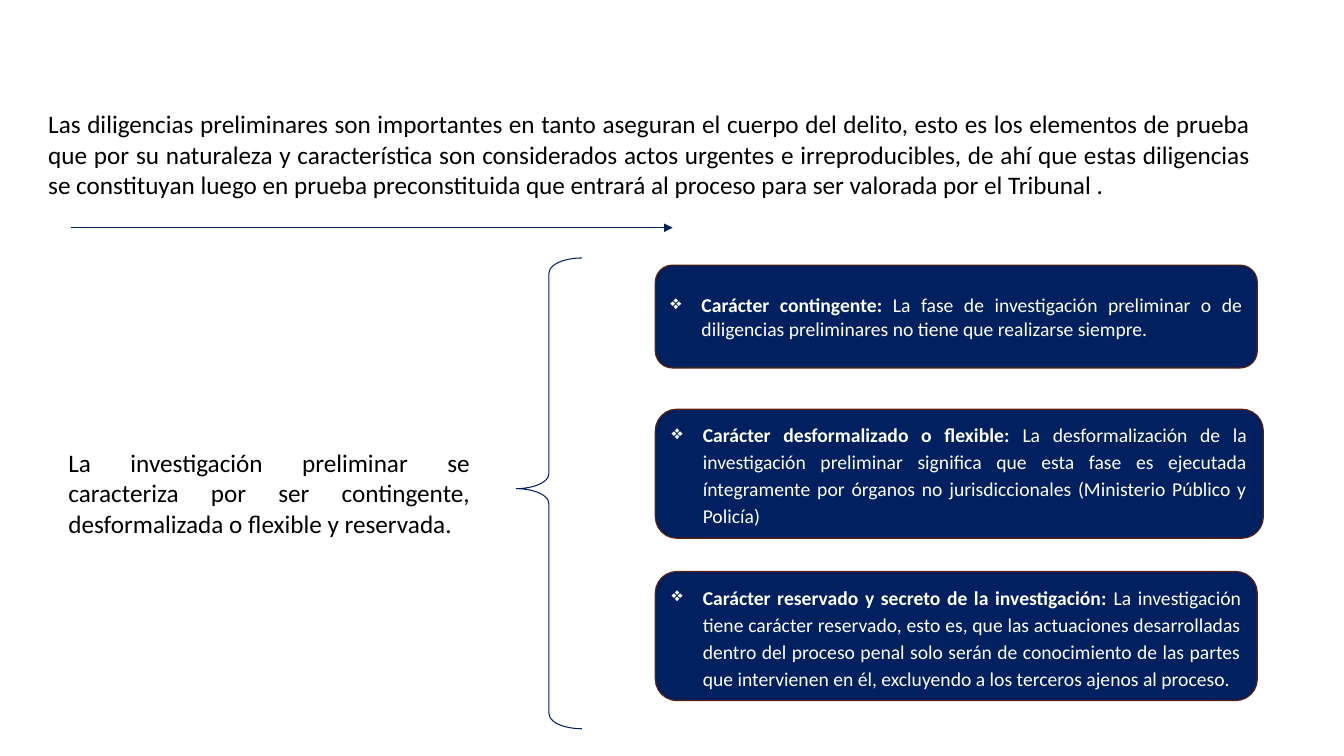
from lxml import etree
from pptx import Presentation
from pptx import util as u
from pptx.dml.color import RGBColor
from pptx.enum import shapes as sh, text as tx
from pptx.oxml.ns import qn

WIDE, HIGH = u.Inches(13.33), u.Inches(7.5)
INK = {"navy": "002060", "brown": "5C200A", "white": "FFFFFF", "black": "000000"}
FONT = "Calibri"

INTRO = (
    "Las diligencias preliminares son importantes en tanto aseguran el cuerpo del delito, "
    "esto es los elementos de prueba que por su naturaleza y característica son considerados "
    "actos urgentes e irreproducibles, de ahí que estas diligencias se constituyan luego en "
    "prueba preconstituida que entrará al proceso para ser valorada por el Tribunal ."
)
TOPIC = (
    "La investigación preliminar se caracteriza por ser contingente, "
    "desformalizada o flexible y reservada."
)
LOOSE = {"line_spacing": 1.15, "space_after": u.Pt(8)}
# top, width, height (percent of the slide), paragraph format, term, meaning
CARDS = [
    (35.07, 44.79, 13.6, {}, "Carácter contingente: ",
     "La fase de investigación preliminar o de diligencias preliminares no tiene que "
     "realizarse siempre."),
    (54.13, 45.24, 17.07, LOOSE, "Carácter desformalizado o flexible: ",
     "La desformalización de la investigación preliminar significa que esta fase es "
     "ejecutada íntegramente por órganos no jurisdiccionales (Ministerio Público y Policía)"),
    (75.6, 44.79, 17.07, LOOSE, "Carácter reservado y secreto de la investigación: ",
     "La investigación tiene carácter reservado, esto es, que las actuaciones desarrolladas "
     "dentro del proceso penal solo serán de conocimiento de las partes que intervienen en "
     "él, excluyendo a los terceros ajenos al proceso."),
]


def place(left, top, wide, high):
    """Turn percentages of the slide into lengths."""
    return [round(part * side / 100)
            for part, side in zip((left, top, wide, high), (WIDE, HIGH) * 2)]


def tint(hue):
    return RGBColor.from_string(INK[hue])


def apply(item, form):
    for key, value in form.items():
        setattr(item, key, value)


def stroke(line, hue, width):
    line.color.rgb = tint(hue)
    line.width = u.Pt(width)


def add_shape(slide, kind, box, fill=None, edge=None, adjust=()):
    shape = slide.shapes.add_shape(kind, *place(*box))
    shape.shadow.inherit = False
    if fill:
        shape.fill.solid()
        shape.fill.fore_color.rgb = tint(fill)
    else:
        shape.fill.background()
    if edge:
        stroke(shape.line, *edge)
    else:
        shape.line.fill.background()
    for spot, value in enumerate(adjust):
        shape.adjustments[spot] = value
    return shape


def write(shape, parts, size, hue, anchor, form=None, bullet=None):
    """Fill a shape with one justified paragraph of (text, bold) parts."""
    frame = shape.text_frame
    apply(frame, {"word_wrap": True, "vertical_anchor": anchor})
    para = frame.paragraphs[0]
    apply(para, {"alignment": tx.PP_ALIGN.JUSTIFY, **(form or {})})
    if bullet:
        props = para._p.get_or_add_pPr()
        indent = u.Inches(0.31)
        props.set("marL", str(indent))
        props.set("indent", str(-indent))
        etree.SubElement(props, qn("a:buChar")).set("char", bullet)
    for words, bold in parts:
        run = para.add_run()
        run.text = words
        apply(run.font, {"name": FONT, "size": u.Pt(size), "bold": bold})
        run.font.color.rgb = tint(hue)


def add_arrow(slide, left, right, level):
    x1, y, x2, _ = place(left, level, right, level)
    arrow = slide.shapes.add_connector(sh.MSO_CONNECTOR.STRAIGHT, x1, y, x2, y)
    stroke(arrow.line, "navy", 0.75)
    etree.SubElement(arrow.line._get_or_add_ln(), qn("a:tailEnd")).set("type", "triangle")
    etree.SubElement(arrow._element.spPr, qn("a:effectLst"))


def add_card(slide, top, wide, high, form, term, meaning):
    card = add_shape(slide, sh.MSO_SHAPE.ROUNDED_RECTANGLE, (48.76, top, wide, high),
                     "navy", ("brown", 0.85))
    write(card, [(term, True), (meaning, False)], 14, "white",
          tx.MSO_ANCHOR.MIDDLE, form, "❖")


def main():
    deck = Presentation()
    apply(deck, {"slide_width": WIDE, "slide_height": HIGH})
    slide = deck.slides.add_slide(deck.slide_layouts[6])

    topic = slide.shapes.add_textbox(*place(4.35, 58.53, 31.36, 13.47))
    write(topic, [(TOPIC, False)], 18, "black", tx.MSO_ANCHOR.TOP)

    intro = add_shape(slide, sh.MSO_SHAPE.SNIP_1_RECTANGLE, (2.85, 8.8, 91.9, 21.47),
                      adjust=[0.16])
    write(intro, [(INTRO, False)], 18, "black", tx.MSO_ANCHOR.MIDDLE)

    add_shape(slide, sh.MSO_SHAPE.LEFT_BRACE, (38.41, 34.13, 4.88, 62.27),
              edge=("navy", 0.75), adjust=[0.23, 0.49])
    for card in CARDS:
        add_card(slide, *card)
    add_arrow(slide, 5.25, 50.04, 30.13)
    deck.save("out.pptx")


if __name__ == "__main__":
    main()
